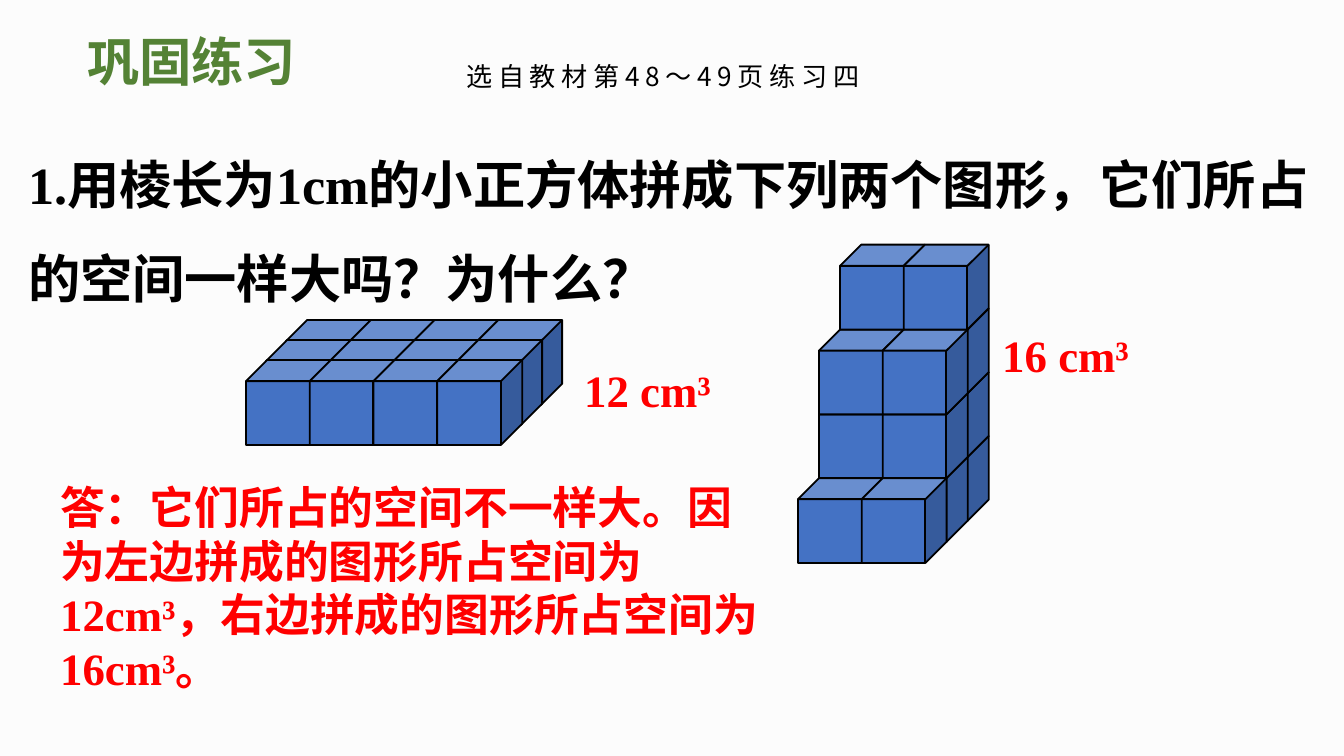
from lxml import etree
from pptx import Presentation
from pptx.dml.color import RGBColor
from pptx.enum.shapes import MSO_SHAPE
from pptx.enum.text import MSO_AUTO_SIZE
from pptx.oxml.ns import qn
from pptx.util import Pt

CUBE = MSO_SHAPE.CUBE
GROW = MSO_AUTO_SIZE.SHAPE_TO_FIT_TEXT

PX = 914400 / 134.4
SANS = "Noto Sans CJK SC"
SERIF = "Times New Roman"
BLACK, RED, GREEN, BLUE = "000000", "FF0000", "548235", "4472C4"
CUBE_SIZE = 85
CUBE_STEP = CUBE_SIZE * 0.75  # width of a cube's front face


def emu(px):
    return round(px * PX)


def rgb(value):
    return RGBColor.from_string(value)


class ExerciseSlide:
    def __init__(self, prs, background):
        self.s = prs.slides.add_slide(prs.slide_layouts[6])
        fill = self.s.background.fill
        fill.solid()
        fill.fore_color.rgb = rgb(background)

    def text(self, box, words, size, color, font=SERIF, bold=True,
             line_spacing=None, tracking=0):
        """Add a one-paragraph text box; tracking is in points."""
        sp = self.s.shapes.add_textbox(*map(emu, box))
        tf = sp.text_frame
        tf.word_wrap = True
        tf.auto_size = GROW
        p = tf.paragraphs[0]
        p.text = words
        if line_spacing:
            p.line_spacing = line_spacing
        p.font.size = Pt(size)
        p.font.bold = bold
        p.font.color.rgb = rgb(color)
        p.font.name = font
        props = p._p.pPr.find(qn("a:defRPr"))
        etree.SubElement(props, qn("a:ea")).set("typeface", SANS)
        if tracking:
            props.set("spc", str(tracking * 100))

    def cube(self, group, x, y):
        sp = group.shapes.add_shape(CUBE, emu(x), emu(y),
                                    emu(CUBE_SIZE), emu(CUBE_SIZE))
        sp.adjustments[0] = 0.25
        sp.shadow.inherit = False
        sp.fill.solid()
        sp.fill.fore_color.rgb = rgb(BLUE)
        sp.line.color.rgb = rgb(BLACK)
        sp.line.width = Pt(1)

    def cube_stack(self, x, y, columns, heights, depth):
        """Stack cubes from the front bottom-left cube at x, y.

        heights lists the rows from front to back; depth is the shift per row.
        """
        group = self.s.shapes.add_group_shape()
        for level in range(max(heights)):
            for row in reversed(range(len(heights))):
                if level >= heights[row]:
                    continue
                for column in range(columns):
                    self.cube(group, x + row * depth + column * CUBE_STEP,
                              y - row * depth - level * CUBE_STEP)


def main():
    prs = Presentation()
    prs.slide_width, prs.slide_height = emu(1344), emu(756)

    slide = ExerciseSlide(prs, "FCFCFC")
    slide.text((74, 23, 250, 77), "巩固练习", 28, GREEN, SANS)
    slide.text((15, 114, 1317, 203),
               "1.用棱长为1cm的小正方体拼成下列两个图形，它们所占的空间一样大吗？为什么？",
               28, BLACK, line_spacing=1.5)
    slide.text((453, 54, 457, 46), "选自教材第48～49页练习四", 14, BLACK,
               SANS, bold=False, tracking=3)

    slide.cube_stack(246, 360, columns=4, heights=(1, 1, 1), depth=20)
    slide.cube_stack(798, 478, columns=2, heights=(1, 3, 4), depth=21)

    slide.text((571, 356, 219, 67), "12 cm³", 24, RED)
    slide.text((989, 321, 179, 67), "16 cm³", 24, RED)
    slide.text((47, 473, 732, 176),
               "答：它们所占的空间不一样大。因为左边拼成的图形所占空间为12cm³，"
               "右边拼成的图形所占空间为16cm³。", 24, RED)

    prs.save("out.pptx")


if __name__ == "__main__":
    main()
